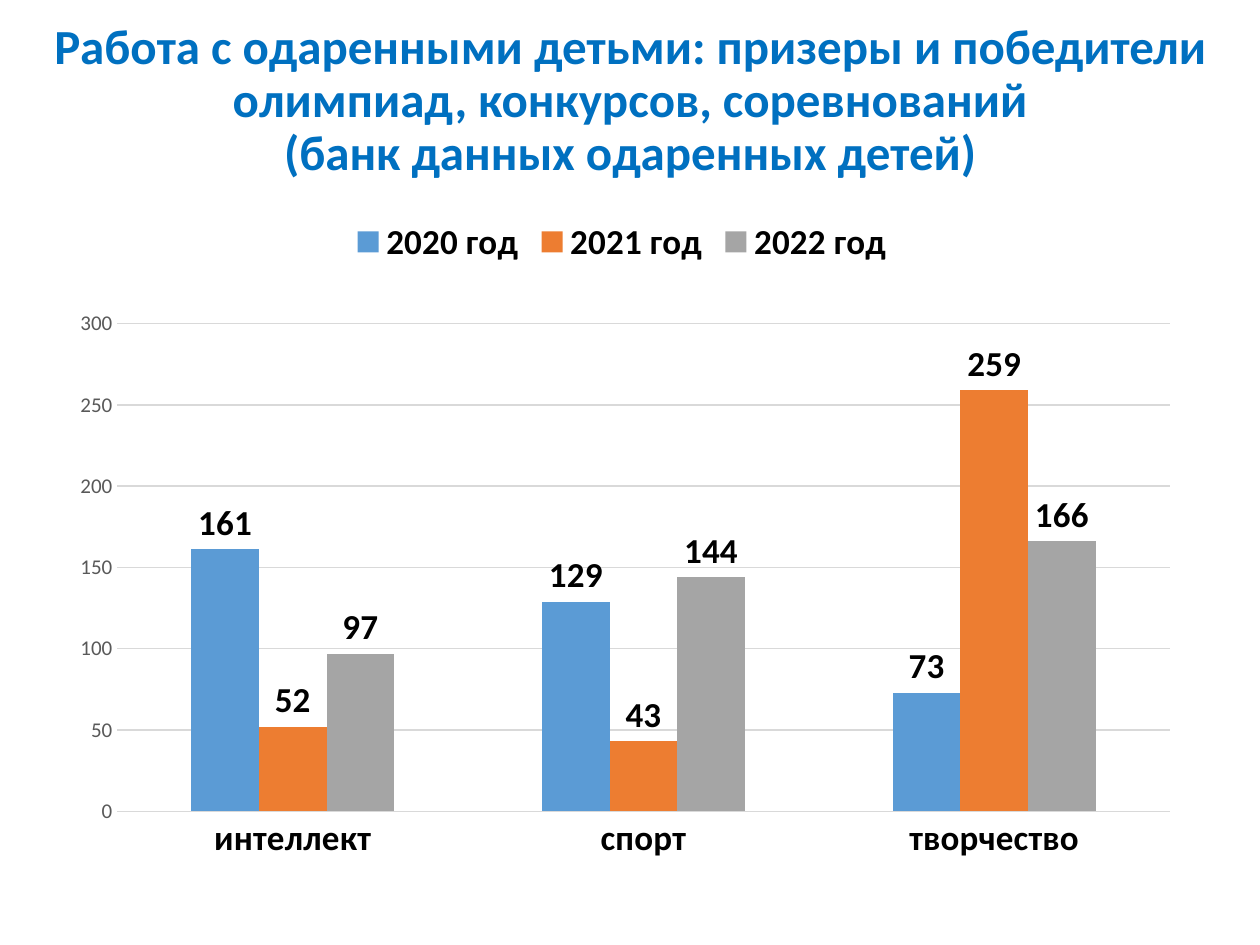
from lxml import etree
from pptx import Presentation
from pptx.chart.data import CategoryChartData
from pptx.dml.color import RGBColor
from pptx.enum import chart as charts, text
from pptx.oxml.ns import qn
from pptx.util import Emu, Pt

PX = 914400 // 126
FONT = "Calibri"
BLACK, GRID, MUTED, TITLE = "000000", "D9D9D9", "595959", "0070C0"
CATEGORIES = ["интеллект", "спорт", "творчество"]
SERIES = [
    ("2020 год", [161, 129, 73], "5B9BD5"),
    ("2021 год", [52, 43, 259], "ED7D31"),
    ("2022 год", [97, 144, 166], "A5A5A5"),
]


def color(value):
    return RGBColor.from_string(value)


def px(*lengths):
    return [Emu(length * PX) for length in lengths]


class SlideBuilder:
    """Holds the current slide and the shared style of its elements."""

    def __init__(self, slide):
        self.slide = slide

    def style(self, font, size, fill, bold=False):
        font.name, font.size, font.bold = FONT, Pt(size), bold
        font.color.rgb = color(fill)

    def title(self, box, wording):
        shape = self.slide.shapes.title
        shape.left, shape.top, shape.width, shape.height = px(*box)
        frame = shape.text_frame
        frame.word_wrap = True
        frame.auto_size = text.MSO_AUTO_SIZE.NONE
        frame.vertical_anchor = text.MSO_ANCHOR.MIDDLE
        paragraph = frame.paragraphs[0]
        paragraph.text = wording
        paragraph.alignment = text.PP_ALIGN.CENTER
        paragraph.line_spacing = 0.9
        for run in paragraph.runs:
            self.style(run.font, 28, TITLE, True)

    def column_chart(self, box, categories, series, plot_box):
        data = CategoryChartData(number_format="General")
        data.categories = categories
        for name, values, _ in series:
            data.add_series(name, values)
        chart = self.slide.shapes.add_chart(
            charts.XL_CHART_TYPE.COLUMN_CLUSTERED, *px(*box), data).chart
        self.style(chart.font, 10, BLACK)
        chart.has_title = False
        chart.has_legend = True
        chart.legend.position = charts.XL_LEGEND_POSITION.TOP
        chart.legend.include_in_layout = False
        self.style(chart.legend.font, 20, BLACK, True)

        plot = chart.plots[0]
        plot.gap_width, plot.overlap, plot.vary_by_categories = 219, 0, False
        for item, (_, _, fill) in zip(plot.series, series):
            item.format.fill.solid()
            item.format.fill.fore_color.rgb = color(fill)
            labels = item.data_labels
            labels.show_value = True
            labels.position = charts.XL_LABEL_POSITION.OUTSIDE_END
            self.style(labels.font, 20, BLACK, True)
        self.axes(chart)
        self.plot_layout(chart, plot_box)

    def axes(self, chart):
        category, value = chart.category_axis, chart.value_axis
        for axis in (category, value):
            axis.major_tick_mark = axis.minor_tick_mark = charts.XL_TICK_MARK.NONE
        self.style(category.tick_labels.font, 20, BLACK, True)
        self.style(value.tick_labels.font, 12, MUTED)
        value.minimum_scale, value.maximum_scale, value.major_unit = 0, 300, 50
        value.format.line.fill.background()
        for line in (category.format.line, value.major_gridlines.format.line):
            line.color.rgb = color(GRID)
            line.width = Pt(0.75)

    def plot_layout(self, chart, plot_box):
        area = chart.element.find(f".//{qn('c:plotArea')}")
        for old in area.findall(qn("c:layout")):
            area.remove(old)
        layout = etree.Element(qn("c:layout"))
        manual = etree.SubElement(layout, qn("c:manualLayout"))
        settings = [("layoutTarget", "inner"), ("xMode", "edge"), ("yMode", "edge")]
        settings += zip("xywh", plot_box)
        for tag, setting in settings:
            etree.SubElement(manual, qn(f"c:{tag}")).set("val", str(setting))
        area.insert(0, layout)


def main():
    presentation = Presentation()
    presentation.slide_width, presentation.slide_height = px(1260, 945)
    slide = presentation.slides.add_slide(presentation.slide_layouts[5])
    builder = SlideBuilder(slide)
    builder.title(
        (0, 0, 1260, 204),
        "Работа с одаренными детьми: призеры и победители олимпиад, конкурсов, "
        "соревнований\n(банк данных одаренных детей)")
    builder.column_chart((55, 204, 1134, 684), CATEGORIES, SERIES,
                         (0.055, 0.175, 0.928, 0.713))
    presentation.save("out.pptx")


if __name__ == "__main__":
    main()
